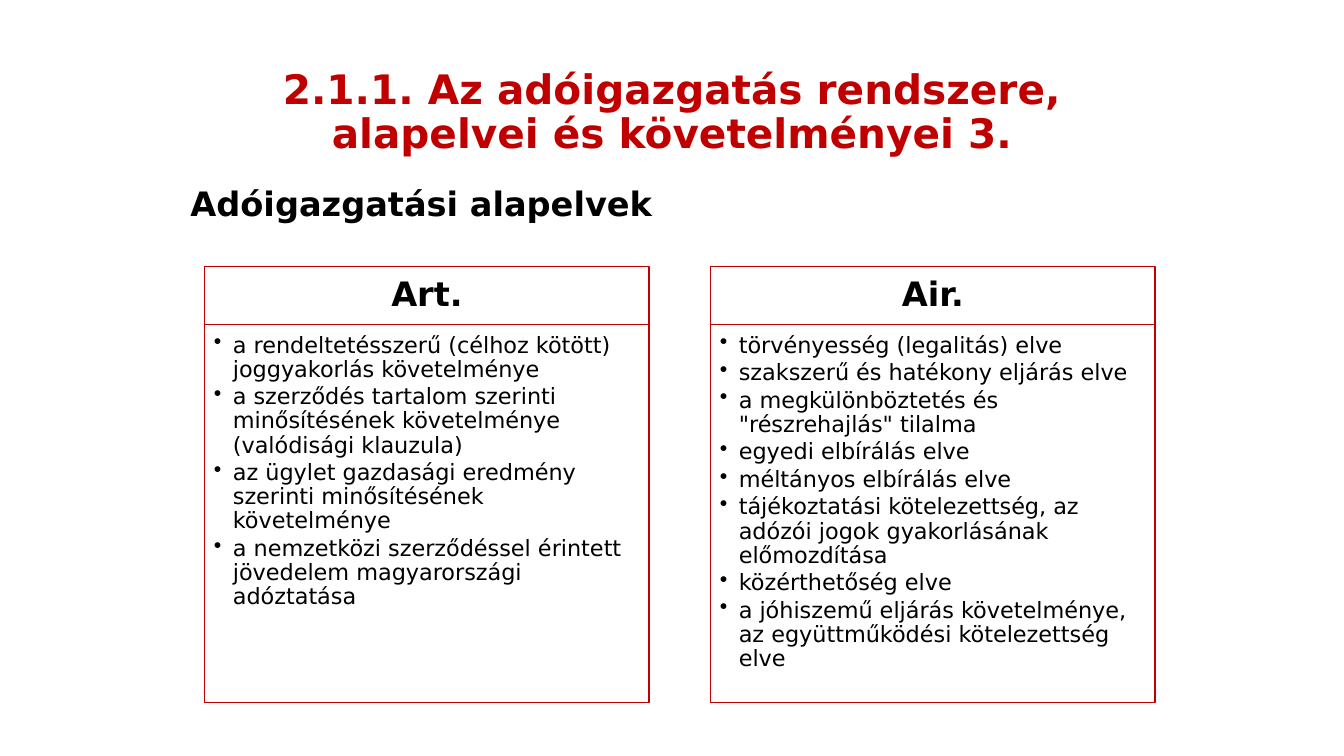
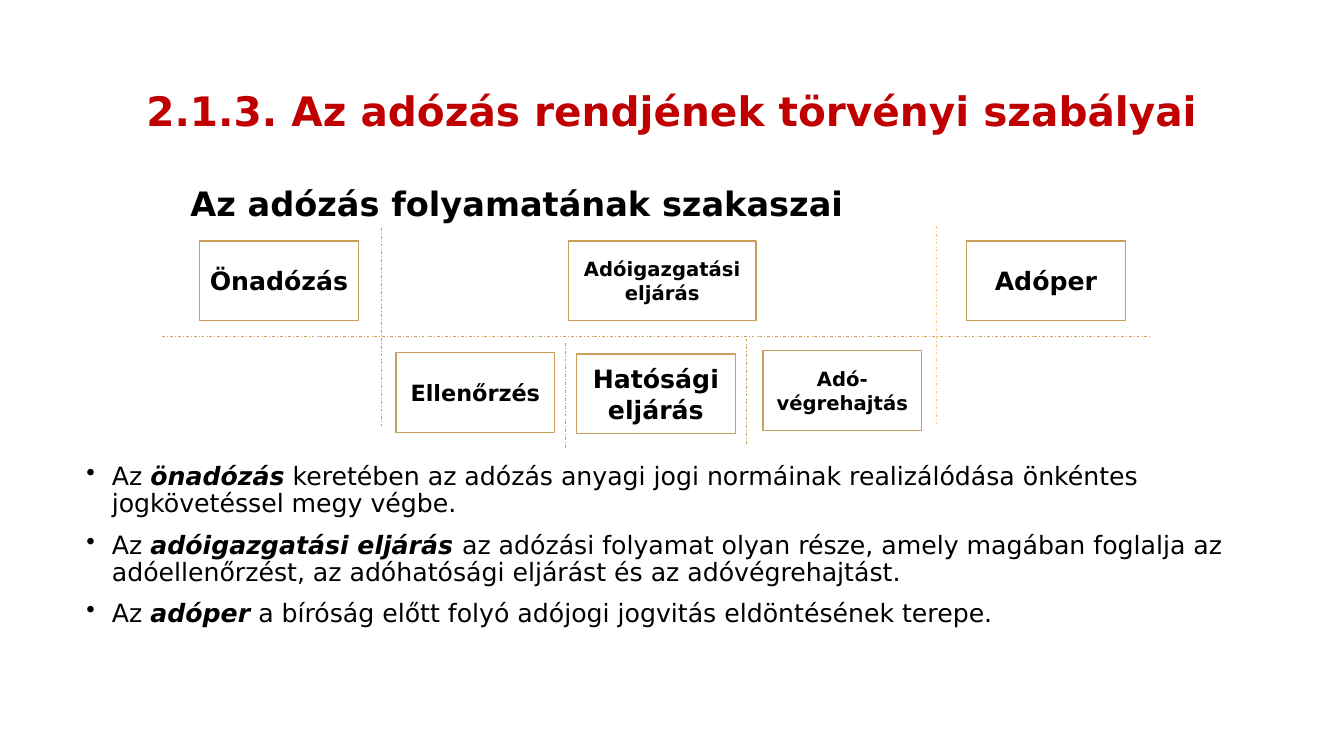
import pptx
import pptx.util
import pptx.dml.color
import pptx.enum.dml
import pptx.enum.shapes
import pptx.enum.text
import pptx.oxml.ns
import lxml.etree

Cm = pptx.util.Cm
Pt = pptx.util.Pt
RGBColor = pptx.dml.color.RGBColor
ALIGN = pptx.enum.text.PP_ALIGN
ANCHOR = pptx.enum.text.MSO_ANCHOR
qn = pptx.oxml.ns.qn

RED = RGBColor(0xC0, 0x00, 0x00)
BLACK = RGBColor(0x00, 0x00, 0x00)
GOLD = RGBColor(0xC9, 0x9E, 0x5A)
PALE_GOLD = RGBColor(0xF1, 0xC9, 0x8B)
FONT = "DejaVu Sans"

TITLE_AREA = (2.34, 1.02, 29.21, 3.68)
DEFAULT_INSETS = (0.25, 0.13, 0.25, 0.13)
HEADER_INSETS = (0.48, 0.28, 0.48, 0.28)
LIST_INSETS = (0.23, 0.23, 0.3, 0.36)


class Deck:
    def __init__(self):
        self.presentation = pptx.Presentation()
        self.presentation.slide_width = Cm(33.87)
        self.presentation.slide_height = Cm(19.05)
        self.slide = None

    def new_slide(self, title, subtitle):
        self.slide = self.presentation.slides.add_slide(self.presentation.slide_layouts[6])
        self.text(TITLE_AREA, title, 29, RED, ALIGN.CENTER, ANCHOR.MIDDLE, 0.9)
        self.text((4.55, 4.47, 20, 1.28), subtitle, 24)

    def set_frame(self, shape, insets, anchor):
        frame = shape.text_frame
        frame.word_wrap = True
        frame.vertical_anchor = anchor
        frame.margin_left, frame.margin_top, frame.margin_right, frame.margin_bottom = map(Cm, insets)
        return frame

    def style(self, para, size, color=BLACK, bold=False):
        para.font.name = FONT
        para.font.size = Pt(size)
        para.font.bold = bold
        para.font.color.rgb = color

    def fill_text(self, shape, text, size, color, align, anchor, spacing, insets):
        para = self.set_frame(shape, insets, anchor).paragraphs[0]
        para.text = text
        para.alignment = align
        para.line_spacing = spacing
        self.style(para, size, color, True)

    def text(self, area, text, size, color=BLACK, align=ALIGN.LEFT, anchor=ANCHOR.TOP, spacing=1.0):
        box = self.slide.shapes.add_textbox(*map(Cm, area))
        self.fill_text(box, text, size, color, align, anchor, spacing, DEFAULT_INSETS)

    def outline(self, area, color):
        box = self.slide.shapes.add_shape(pptx.enum.shapes.MSO_SHAPE.RECTANGLE, *map(Cm, area))
        box.shadow.inherit = False
        box.fill.background()
        box.line.color.rgb = color
        box.line.width = Pt(1)
        return box

    def label(self, area, text, size, color=GOLD, spacing=1.0, insets=DEFAULT_INSETS):
        box = self.outline(area, color)
        self.fill_text(box, text, size, BLACK, ALIGN.CENTER, ANCHOR.MIDDLE, spacing, insets)

    def bullets(self, shape, items, size, indent, before=0, after=0, insets=DEFAULT_INSETS):
        frame = self.set_frame(shape, insets, ANCHOR.TOP)
        for index, item in enumerate(items):
            para = frame.add_paragraph() if index else frame.paragraphs[0]
            properties = para._p.get_or_add_pPr()
            properties.set("marL", str(Cm(indent)))
            properties.set("indent", str(-Cm(indent)))
            lxml.etree.SubElement(properties, qn("a:buChar")).set("char", "•")
            para.alignment = ALIGN.LEFT
            para.line_spacing = 0.9
            para.space_before = Pt(before if index else 0)
            para.space_after = Pt(after)
            self.style(para, size)
            for position, words in enumerate(item):
                span = para.add_run()
                span.text = words
                if position == 1:
                    span.font.bold = span.font.italic = True

    def panel(self, left, heading, items):
        width = 11.2
        self.label((left, 6.71, width, 1.47), heading, 24, RED, 0.9, HEADER_INSETS)
        body = self.outline((left, 8.18, width, 9.53), RED)
        self.bullets(body, [(item,) for item in items], 16, 0.48, after=2.4, insets=LIST_INSETS)

    def body(self, area, items):
        box = self.slide.shapes.add_textbox(*map(Cm, area))
        self.bullets(box, items, 18, 0.64, before=10)

    def divider(self, start, end, color=GOLD):
        line = self.slide.shapes.add_connector(
            pptx.enum.shapes.MSO_CONNECTOR.STRAIGHT, *map(Cm, start + end))
        line.line.color.rgb = color
        line.line.width = Pt(0.5)
        line.line.dash_style = pptx.enum.dml.MSO_LINE.DASH_DOT
        lxml.etree.SubElement(line._element.spPr, qn("a:effectLst"))


def add_principles(deck):
    deck.new_slide("2.1.1. Az adóigazgatás rendszere,\nalapelvei és követelményei 3.",
                   "Adóigazgatási alapelvek")
    panels = [
        ("Art.", [
            "a rendeltetésszerű (célhoz kötött) joggyakorlás követelménye",
            "a szerződés tartalom szerinti minősítésének követelménye (valódisági klauzula)",
            "az ügylet gazdasági eredmény szerinti minősítésének követelménye",
            "a nemzetközi szerződéssel érintett jövedelem magyarországi adóztatása",
        ]),
        ("Air.", [
            "törvényesség (legalitás) elve",
            "szakszerű és hatékony eljárás elve",
            "a megkülönböztetés és \"részrehajlás\" tilalma",
            "egyedi elbírálás elve",
            "méltányos elbírálás elve",
            "tájékoztatási kötelezettség, az adózói jogok gyakorlásának előmozdítása",
            "közérthetőség elve",
            "a jóhiszemű eljárás követelménye, az együttműködési kötelezettség elve",
        ]),
    ]
    for column, (heading, items) in enumerate(panels):
        deck.panel(5.16 + column * 12.75, heading, items)


def add_stages(deck):
    deck.new_slide("2.1.3. Az adózás rendjének törvényi szabályai",
                   "Az adózás folyamatának szakaszai")
    deck.body((1.93, 11.56, 29.21, 5.2), [
        ("Az ", "önadózás", " keretében az adózás anyagi jogi normáinak realizálódása "
         "önkéntes jogkövetéssel megy végbe."),
        ("Az ", "adóigazgatási eljárás ", "az adózási folyamat olyan része, amely magában "
         "foglalja az adóellenőrzést, az adóhatósági eljárást és az adóvégrehajtást."),
        ("Az ", "adóper", " a bíróság előtt folyó adójogi jogvitás eldöntésének terepe."),
    ])
    stages = [
        (5.03, 6.07, 4, "Önadózás", 18),
        (14.33, 6.07, 4.72, "Adóigazgatási eljárás", 14),
        (9.98, 8.89, 4, "Ellenőrzés", 16),
        (14.53, 8.92, 4, "Hatósági eljárás", 18),
        (19.23, 8.84, 4, "Adó-\nvégrehajtás", 14),
        (24.36, 6.07, 4, "Adóper", 18),
    ]
    for left, top, width, name, size in stages:
        deck.label((left, top, width, 2.01), name, size)
    for left, top, height, color in [
        (9.6, 5.74, 5, GOLD),
        (23.6, 5.69, 5, PALE_GOLD),
        (14.25, 8.64, 2.69, GOLD),
        (18.82, 8.53, 2.69, GOLD),
    ]:
        deck.divider((left, top), (left, top + height), color)
    deck.divider((4.09, 8.48), (29.01, 8.48))


def main():
    deck = Deck()
    add_principles(deck)
    add_stages(deck)
    deck.presentation.save("out.pptx")


if __name__ == "__main__":
    main()
